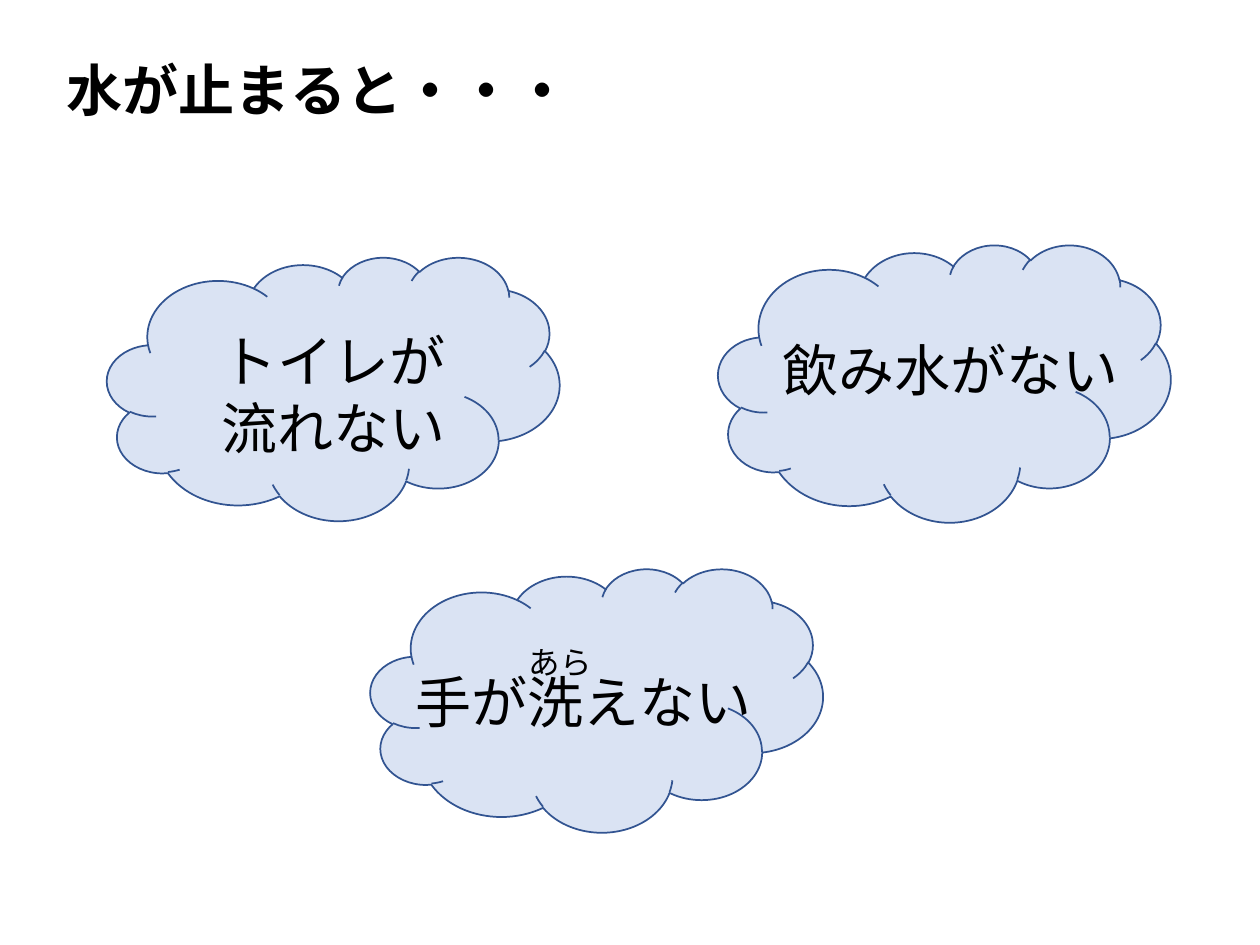
import pptx
import pptx.dml.color
import pptx.enum.shapes
import pptx.enum.text
import pptx.util

Cm = pptx.util.Cm
ALIGN = pptx.enum.text.PP_ALIGN
COLORS = {"cloud": "DAE3F3", "outline": "325491", "text": "000000"}
FONT = "Calibri"
CLOUD_WIDTH = 9.12


def color(name):
    return pptx.dml.color.RGBColor.from_string(COLORS[name])


def add_text(slide, box, lines, size=32, bold=False, align=ALIGN.CENTER):
    text_box = slide.shapes.add_textbox(*[Cm(length) for length in box])
    frame = text_box.text_frame
    frame.word_wrap = True
    frame.auto_size = pptx.enum.text.MSO_AUTO_SIZE.SHAPE_TO_FIT_TEXT
    for index, line in enumerate(lines):
        paragraph = frame.add_paragraph() if index else frame.paragraphs[0]
        paragraph.alignment = align
        run = paragraph.add_run()
        run.text = line
        run.font.name = FONT
        run.font.size = pptx.util.Pt(size)
        run.font.bold = bold
        run.font.color.rgb = color("text")


def add_cloud(slide, left, top, height, lines, text_box, reading=None):
    """Draw a cloud and its texts; text boxes are offsets from its corner."""
    cloud = slide.shapes.add_shape(
        pptx.enum.shapes.MSO_SHAPE.CLOUD,
        Cm(left), Cm(top), Cm(CLOUD_WIDTH), Cm(height))
    cloud.shadow.inherit = False
    cloud.fill.solid()
    cloud.fill.fore_color.rgb = color("cloud")
    cloud.line.color.rgb = color("outline")
    cloud.line.width = pptx.util.Pt(1)

    def place(box):
        x, y, width, box_height = box
        return left + x, top + y, width, box_height

    add_text(slide, place(text_box), lines)
    if reading:
        text, box = reading
        add_text(slide, place(box), [text], size=18)


def main():
    presentation = pptx.Presentation()
    presentation.slide_width = Cm(25.4)
    presentation.slide_height = Cm(19.05)
    slide = presentation.slides.add_slide(presentation.slide_layouts[6])

    add_text(slide, (1.09, 0.99, 11.61, 1.63), ["水が止まると・・・"],
             bold=True, align=ALIGN.LEFT)
    add_cloud(slide, 2.16, 5.18, 5.31, ["トイレが", "流れない"],
              (0.28, 1.27, 8.56, 3))
    add_cloud(slide, 14.48, 4.93, 5.59, ["飲み水がない"],
              (0.58, 1.7, 8.2, 1.63))
    add_cloud(slide, 7.47, 11.46, 5.31, ["手が洗えない"],
              (0.38, 1.88, 7.82, 1.63),
              reading=("あら", (1.83, 1.37, 3.99, 1.02)))

    presentation.save("out.pptx")


if __name__ == "__main__":
    main()
